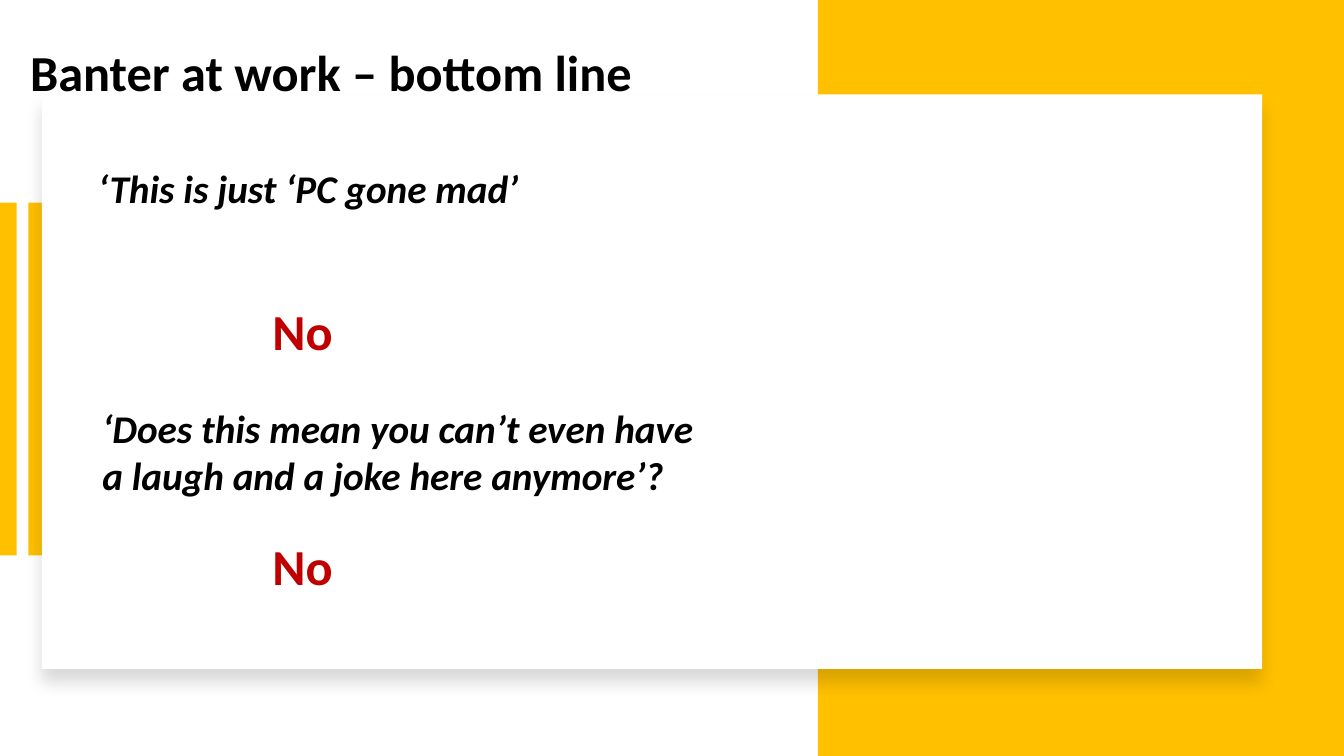
from dataclasses import dataclass

from lxml.etree import SubElement
from pptx import Presentation
from pptx.dml.color import RGBColor
from pptx.enum.shapes import MSO_SHAPE as Shape
from pptx.enum.text import MSO_ANCHOR as Anchor, MSO_AUTO_SIZE as AutoSize, PP_ALIGN as Align
from pptx.oxml.ns import qn
from pptx.util import Pt

PX = 9525  # EMU in one px, at 96 px to the inch


@dataclass(frozen=True)
class Theme:
    font: str = "Calibri"
    accent: str = "FFC000"
    card: str = "FFFFFF"
    ink: str = "000000"
    answer: str = "C00000"
    large: int = 36
    medium: int = 28


THEME = Theme()


def px(*lengths):
    return [length * PX for length in lengths]


def write(frame, text, *, size, color=THEME.ink, italic=False):
    frame.word_wrap = True
    frame.auto_size = AutoSize.NONE
    frame.vertical_anchor = Anchor.TOP
    para = frame.paragraphs[0]
    para.alignment = Align.LEFT
    span = para.add_run()
    span.text = text
    font = span.font
    font.name, font.size = THEME.font, Pt(size)
    font.bold, font.italic = True, italic
    font.color.rgb = RGBColor.from_string(color)


def add_block(page, box, color):
    block = page.shapes.add_shape(Shape.RECTANGLE, *px(*box))
    block.shadow.inherit = False
    block.fill.solid()
    block.fill.fore_color.rgb = RGBColor.from_string(color)
    block.line.fill.background()
    return block


def add_text(page, box, text, **style):
    write(page.shapes.add_textbox(*px(*box)).text_frame, text, **style)


def drop_shadow(shape, blur, distance, opacity):
    """Cast a soft black shadow straight down; opacity is in percent."""
    effects = shape.element.spPr.find(qn("a:effectLst"))
    shadow = SubElement(effects, qn("a:outerShdw"), blurRad=str(blur * PX),
                        dist=str(distance * PX), dir="5400000",
                        algn="t", rotWithShape="0")
    tint = SubElement(shadow, qn("a:srgbClr"), val="000000")
    SubElement(tint, qn("a:alpha"), val=str(opacity * 1000))


def add_stripes(page, box):
    """Put one stripe at each side of the box."""
    left, top, width, height = box
    stripe = 16
    for x in (left, left + width - stripe):
        add_block(page, (x, top, stripe, height), THEME.accent)


def add_card(page, box):
    drop_shadow(add_block(page, box, THEME.card), blur=15, distance=13, opacity=15)


def add_exchange(page, box, quote, answer, answer_at):
    """Show a quote in the box, with its answer offset from the box corner."""
    left, top = box[:2]
    dx, dy = answer_at
    add_text(page, box, quote, size=THEME.medium, italic=True)
    add_text(page, (left + dx, top + dy, 115, 68), answer,
             size=THEME.large, color=THEME.answer)


def set_title(page, box, text):
    title = page.shapes.title
    title.left, title.top, title.width, title.height = px(*box)
    write(title.text_frame, text, size=THEME.large)
    title.element.getparent().append(title.element)  # in front of the card


def build_banter_page(deck):
    page = deck.slides.add_slide(deck.slide_layouts.get_by_name("Title Only"))
    add_block(page, (779, 0, 501, 720), THEME.accent)
    add_stripes(page, (0, 193, 43, 336))
    add_card(page, (40, 90, 1162, 547))
    add_exchange(page, (84, 152, 645, 55), "‘This is just ‘PC gone mad’",
                 "No", answer_at=(166, 129))
    add_exchange(page, (88, 380, 597, 130),
                 "‘Does this mean you can’t even have a laugh and a joke here anymore’?",
                 "No", answer_at=(162, 125))
    set_title(page, (19, 34, 883, 68), "Banter at work – bottom line")


def main():
    deck = Presentation()
    deck.slide_width, deck.slide_height = px(1280, 720)
    build_banter_page(deck)
    deck.save("out.pptx")


if __name__ == "__main__":
    main()
